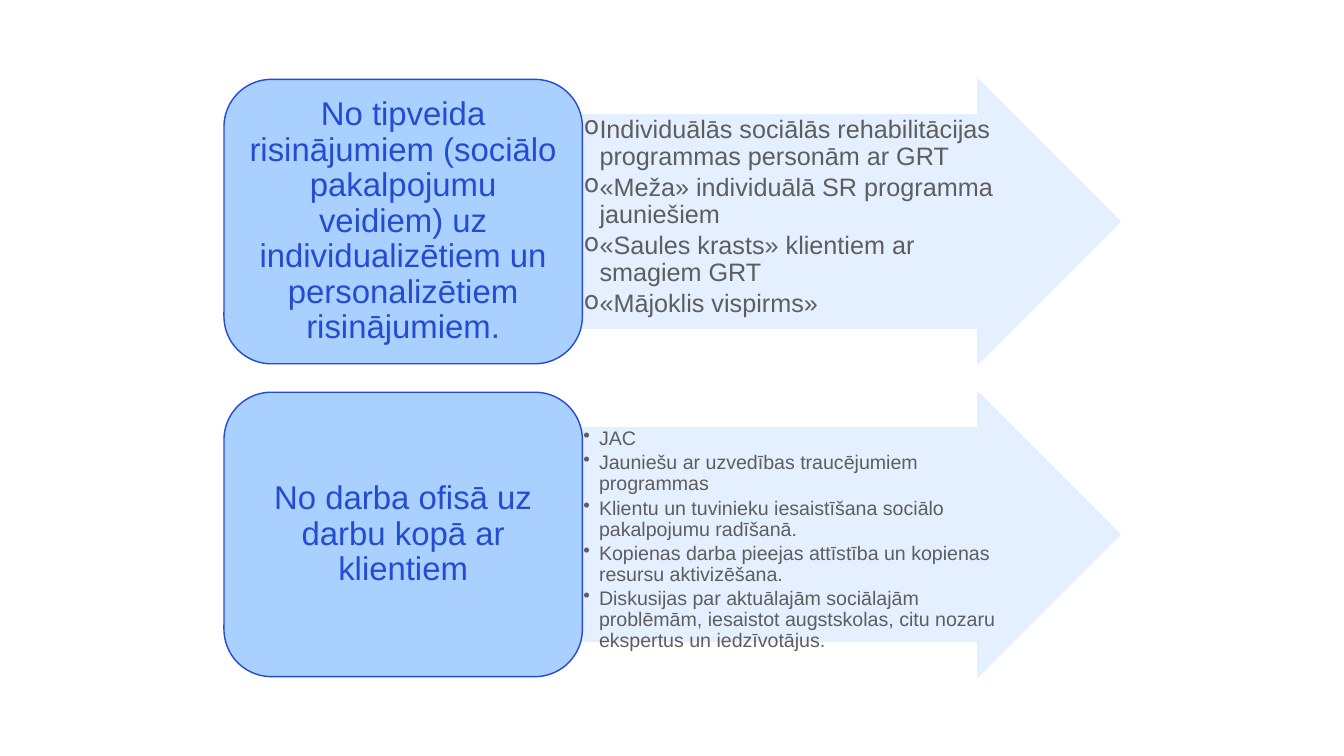
from dataclasses import dataclass

from lxml import etree
from pptx import Presentation
from pptx.dml.color import RGBColor
from pptx.enum.shapes import MSO_SHAPE
from pptx.enum.text import MSO_ANCHOR, PP_ALIGN
from pptx.oxml.ns import qn
from pptx.shapes.autoshape import Shape
from pptx.shapes.shapetree import GroupShapes
from pptx.util import Inches, Pt

ARROW = MSO_SHAPE.RIGHT_ARROW
ROUND = MSO_SHAPE.ROUNDED_RECTANGLE
TOP, MIDDLE = MSO_ANCHOR.TOP, MSO_ANCHOR.MIDDLE
LEFT, CENTER = PP_ALIGN.LEFT, PP_ALIGN.CENTER

PALE = RGBColor(0xE2, 0xEE, 0xFF)
SKY = RGBColor(0xAA, 0xD0, 0xFF)
BLUE = RGBColor(0x24, 0x4C, 0xD3)
GREY = RGBColor(0x5E, 0x5E, 0x5E)

WIDE, TALL = 26.67, 15
SPAN = WIDE * 2 / 3
START = (WIDE - SPAN) / 2
LABEL = SPAN * 0.4
BODY = SPAN - LABEL
DEPTH = TALL * 0.79
HIGH = DEPTH / 2.1
PITCH = HIGH * 1.1
FIRST = (TALL - DEPTH) / 2
SHAFT, HEAD = 0.75, 0.5
HANG = 0.31


@dataclass(frozen=True)
class Box:
    left: float
    top: float
    width: float
    height: float

    def shrink(self, edge: float) -> "Box":
        return Box(self.left + edge, self.top + edge,
                   self.width - 2 * edge, self.height - 2 * edge)

    def units(self) -> list[int]:
        return [Inches(n) for n in (self.left, self.top, self.width, self.height)]


@dataclass(frozen=True)
class Row:
    title: str
    points: list[str]
    size: float
    mark: str
    inset: float


ROWS = [
    Row("No tipveida risinājumiem (sociālo pakalpojumu veidiem) uz "
        "individualizētiem un personalizētiem risinājumiem.",
        ["Individuālās sociālās rehabilitācijas programmas personām ar GRT",
         "«Meža» individuālā SR programma jauniešiem",
         "«Saules krasts» klientiem ar smagiem GRT",
         "«Mājoklis vispirms»"],
        36, "o", 0.03),
    Row("No darba ofisā uz darbu kopā ar klientiem",
        ["JAC",
         "Jauniešu ar uzvedības traucējumiem programmas",
         "Klientu un tuvinieku iesaistīšana sociālo pakalpojumu radīšanā.",
         "Kopienas darba pieejas attīstība un kopienas resursu aktivizēšana.",
         "Diskusijas par aktuālajām sociālajām problēmām, iesaistot "
         "augstskolas, citu nozaru ekspertus un iedzīvotājus."],
        28, "•", 0.02),
]


def draw_shape(group: GroupShapes, kind: MSO_SHAPE, box: Box,
               fill: RGBColor, line: RGBColor, alpha: int = 100) -> Shape:
    shape = group.add_shape(kind, *box.units())
    shape.shadow.inherit = False
    shape.fill.solid()
    shape.fill.fore_color.rgb = fill
    shape.line.color.rgb = line
    shape.line.width = Pt(2)
    if alpha < 100:
        for color in shape.element.spPr.iter(qn("a:srgbClr")):
            etree.SubElement(color, qn("a:alpha"), val=str(alpha * 1000))
    return shape


def write_text(group: GroupShapes, box: Box, lines: list[str], *, size: float,
               color: RGBColor, after: float, pads: tuple[float, float],
               align: PP_ALIGN = LEFT, anchor: MSO_ANCHOR = TOP,
               mark: str = "") -> None:
    frame = group.add_textbox(*box.units()).text_frame
    frame.word_wrap = True
    frame.vertical_anchor = anchor
    frame.margin_left = frame.margin_right = Inches(pads[0])
    frame.margin_top = frame.margin_bottom = Inches(pads[1])
    for index, line in enumerate(lines):
        para = frame.paragraphs[0] if index == 0 else frame.add_paragraph()
        para.alignment = align
        para.line_spacing = 0.9
        para.space_after = Pt(size * after)
        run = para.add_run()
        run.text = line
        run.font.name = "Arial"
        run.font.size = Pt(size)
        run.font.color.rgb = color
        if mark:
            para.level = 1
            props = para._p.get_or_add_pPr()
            props.set("marL", str(Inches(HANG)))
            props.set("indent", str(-Inches(HANG)))
            etree.SubElement(props, qn("a:buChar"), char=mark)


def draw_row(group: GroupShapes, row: Row, top: float) -> None:
    body = Box(START + LABEL, top, BODY, HIGH)
    arrow = draw_shape(group, ARROW, body, PALE, PALE, 90)
    arrow.adjustments[0] = SHAFT
    arrow.adjustments[1] = HEAD
    shaft = Box(body.left, top + HIGH * (1 - SHAFT) / 2,
                BODY - HIGH * HEAD * SHAFT, HIGH * SHAFT)
    write_text(group, shaft, row.points, size=row.size, color=GREY, after=0.15,
               pads=(row.inset, row.inset), mark=row.mark)

    label = Box(START, top, LABEL, HIGH)
    draw_shape(group, ROUND, label, SKY, BLUE)
    write_text(group, label.shrink(HIGH * 0.05), [row.title], size=47, color=BLUE,
               after=0.35, pads=(0.2, 0.1), align=CENTER, anchor=MIDDLE)


def main() -> None:
    deck = Presentation()
    deck.slide_width = Inches(WIDE)
    deck.slide_height = Inches(TALL)
    slide = deck.slides.add_slide(deck.slide_layouts[6])
    group = slide.shapes.add_group_shape().shapes
    for index, row in enumerate(ROWS):
        draw_row(group, row, FIRST + index * PITCH)
    deck.save("out.pptx")


if __name__ == "__main__":
    main()
